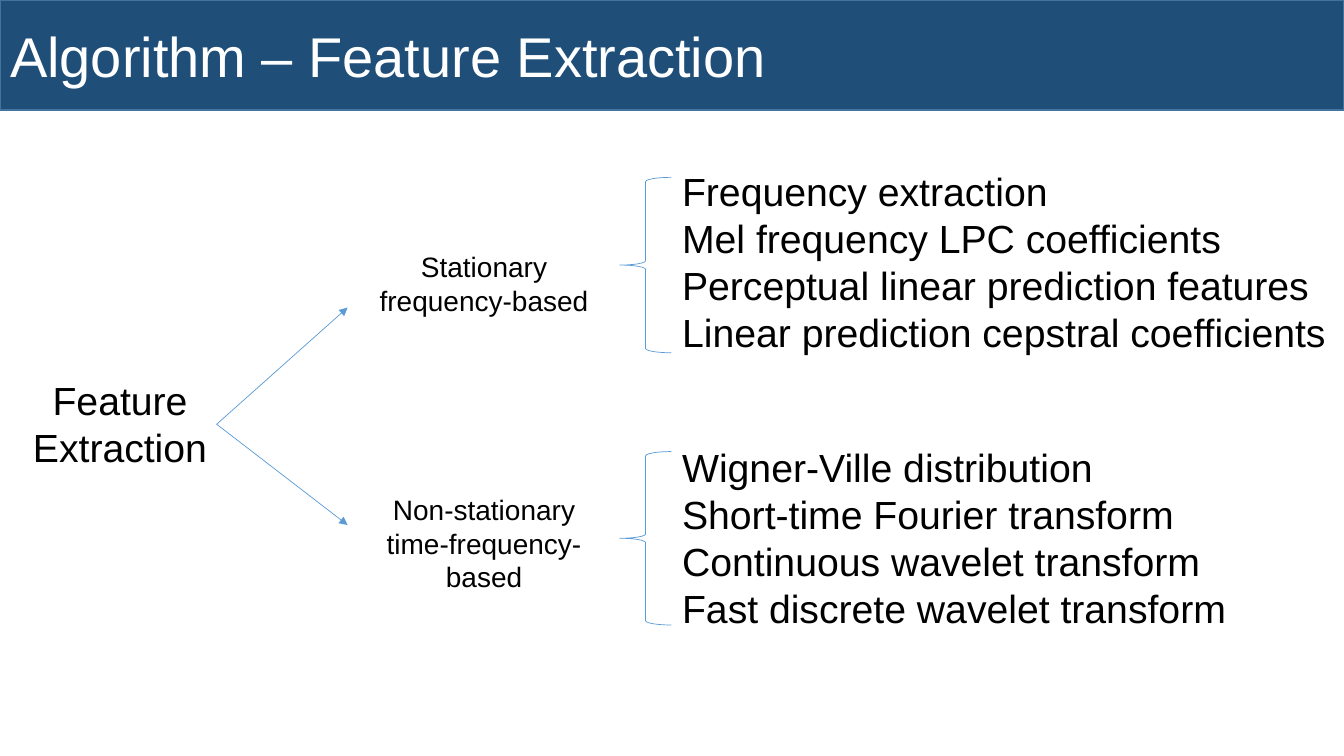
from dataclasses import dataclass

from lxml.etree import SubElement
from pptx import Presentation
from pptx.dml.color import RGBColor
from pptx.enum.shapes import MSO_CONNECTOR, MSO_SHAPE
from pptx.enum.text import MSO_ANCHOR, MSO_AUTO_SIZE, PP_ALIGN
from pptx.oxml.ns import qn
from pptx.slide import Slide
from pptx.text.text import TextFrame
from pptx.util import Cm, Pt

NAVY = RGBColor(0x1F, 0x4E, 0x79)
NAVY_EDGE = RGBColor(0x43, 0x73, 0x9E)
BLUE = RGBColor(0x5B, 0x9B, 0xD5)
WHITE = RGBColor(0xFF, 0xFF, 0xFF)
BLACK = RGBColor(0x00, 0x00, 0x00)
FONT = "Arial"
HAIRLINE = Pt(0.5)

# Shared geometry in centimetres
SLIDE_WIDTH, SLIDE_HEIGHT = 33.87, 19.05
ROOT_TIP = (5.46, 10.69)
LABEL_LEFT, LABEL_WIDTH = 8.76, 6.88
BRACE_LEFT, BRACE_WIDTH = 15.62, 1.3
METHODS_LEFT, METHODS_HEIGHT = 16.94, 5.05


@dataclass(frozen=True)
class Branch:
    label: list[str]
    label_top: float
    label_height: float
    arrow_end: float
    brace_top: float
    brace_height: float
    methods: list[str]
    methods_top: float
    methods_width: float


BRANCHES = [
    Branch(["Stationary", "frequency-based"], 6.17, 1.96, 7.75, 4.47, 4.42,
           ["Frequency extraction", "Mel frequency LPC coefficients",
            "Perceptual linear prediction features",
            "Linear prediction cepstral coefficients"], 4.09, 16.94),
    Branch(["Non-stationary", "time-frequency-based"], 12.29, 2.82, 13.23, 11.38, 4.37,
           ["Wigner-Ville distribution", "Short-time Fourier transform",
            "Continuous wavelet transform", "Fast discrete wavelet transform"],
           11.05, 14.73),
]


def write(frame: TextFrame, lines: list[str], *, size: float,
          color: RGBColor = BLACK, align: PP_ALIGN = PP_ALIGN.LEFT,
          anchor: MSO_ANCHOR = MSO_ANCHOR.TOP) -> None:
    frame.word_wrap = True
    frame.auto_size = MSO_AUTO_SIZE.NONE
    frame.vertical_anchor = anchor
    frame.text = "\n".join(lines)
    for paragraph in frame.paragraphs:
        paragraph.alignment = align
        font = paragraph.runs[0].font
        font.name, font.size = FONT, Pt(size)
        font.color.rgb = color


def add_text(slide: Slide, left: float, top: float, width: float, height: float,
             lines: list[str], *, size: float, align: PP_ALIGN = PP_ALIGN.LEFT) -> None:
    box = slide.shapes.add_textbox(Cm(left), Cm(top), Cm(width), Cm(height))
    write(box.text_frame, lines, size=size, align=align)


def add_title_bar(slide: Slide, text: str) -> None:
    title = slide.shapes.title
    title.left, title.top = Cm(0), Cm(0)
    title.width, title.height = Cm(SLIDE_WIDTH), Cm(2.77)
    title.fill.solid()
    title.fill.fore_color.rgb = NAVY
    title.line.color.rgb = NAVY_EDGE
    title.line.width = Pt(1)
    write(title.text_frame, [text], size=40, color=WHITE, anchor=MSO_ANCHOR.MIDDLE)


def add_arrow(slide: Slide, start: tuple[float, float], end: tuple[float, float]) -> None:
    arrow = slide.shapes.add_connector(
        MSO_CONNECTOR.STRAIGHT, *(Cm(value) for value in (*start, *end)))
    arrow.line.color.rgb = BLUE
    arrow.line.width = HAIRLINE
    SubElement(arrow.line._get_or_add_ln(), qn("a:tailEnd"), type="triangle")
    SubElement(arrow._element.spPr, qn("a:effectLst"))


def add_brace(slide: Slide, top: float, height: float) -> None:
    brace = slide.shapes.add_shape(MSO_SHAPE.LEFT_BRACE, Cm(BRACE_LEFT), Cm(top),
                                   Cm(BRACE_WIDTH), Cm(height))
    brace.shadow.inherit = False
    brace.fill.background()
    brace.line.color.rgb = BLUE
    brace.line.width = HAIRLINE


def add_branch(slide: Slide, branch: Branch) -> None:
    add_arrow(slide, ROOT_TIP, (LABEL_LEFT, branch.arrow_end))
    add_text(slide, LABEL_LEFT, branch.label_top, LABEL_WIDTH, branch.label_height,
             branch.label, size=20, align=PP_ALIGN.CENTER)
    add_brace(slide, branch.brace_top, branch.brace_height)
    add_text(slide, METHODS_LEFT, branch.methods_top, branch.methods_width,
             METHODS_HEIGHT, branch.methods, size=28)


def main() -> None:
    deck = Presentation()
    deck.slide_width, deck.slide_height = Cm(SLIDE_WIDTH), Cm(SLIDE_HEIGHT)
    slide = deck.slides.add_slide(deck.slide_layouts.get_by_name("Title Only"))

    # Title bar
    add_title_bar(slide, "Algorithm – Feature Extraction")

    # Root of the tree and its two branches
    add_text(slide, 0.56, 9.35, 4.93, 2.64, ["Feature Extraction"],
             size=28, align=PP_ALIGN.CENTER)
    for branch in BRANCHES:
        add_branch(slide, branch)

    deck.save("out.pptx")


if __name__ == "__main__":
    main()
